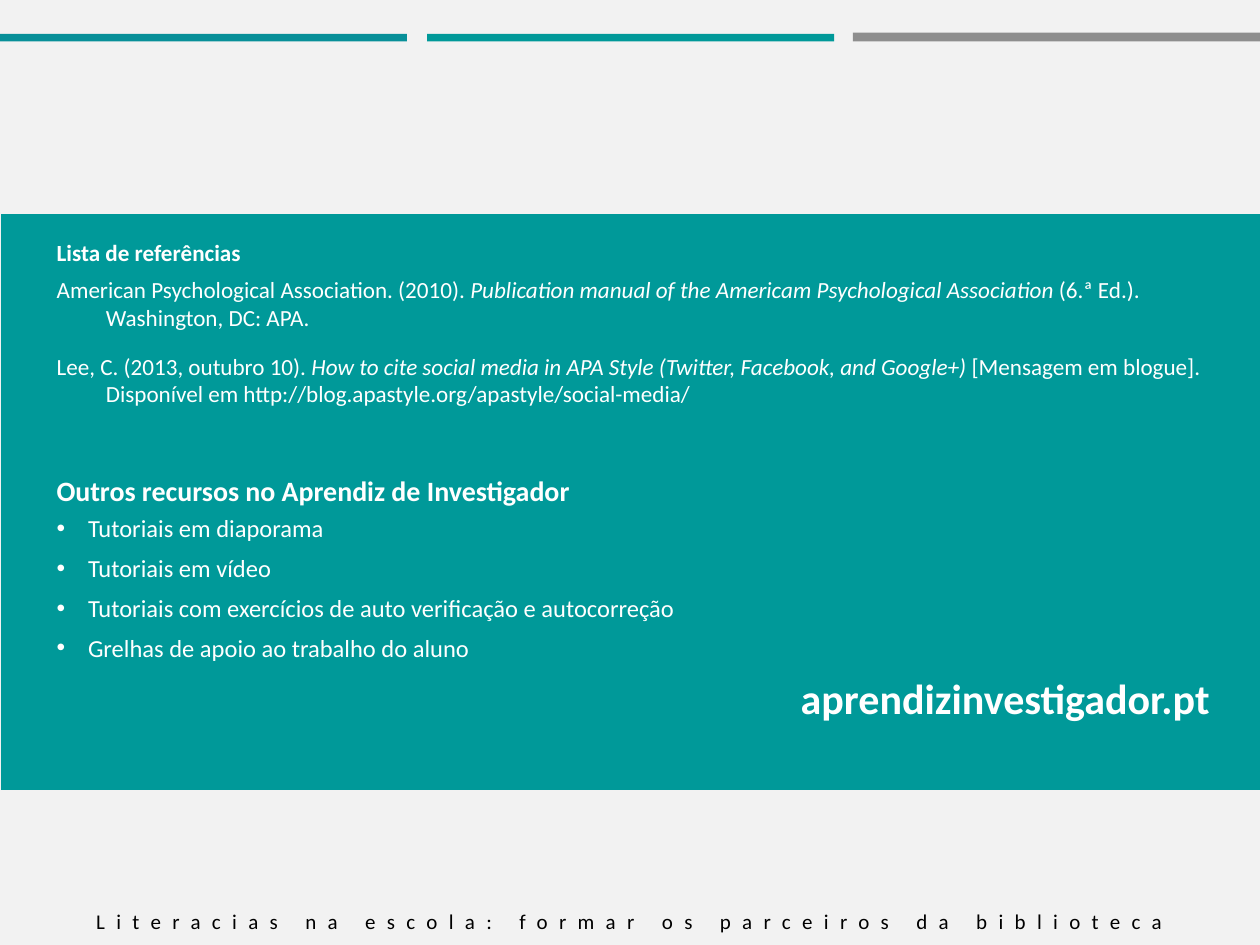
from lxml.etree import SubElement
from pptx import Presentation
from pptx.dml.color import RGBColor
from pptx.enum.shapes import MSO_SHAPE as SHAPE
from pptx.enum.text import MSO_ANCHOR as ANCHOR, MSO_AUTO_SIZE as AUTO, PP_ALIGN as ALIGN
from pptx.oxml.ns import qn
from pptx.util import Inches, Pt

BACKGROUND = RGBColor(0xF2, 0xF2, 0xF2)
TEAL = RGBColor(0x00, 0x99, 0x99)
DARK_TEAL = RGBColor(0x08, 0x90, 0x99)
GRAY = RGBColor(0x8E, 0x8E, 0x8E)
WHITE = RGBColor(0xFF, 0xFF, 0xFF)
BLACK = RGBColor(0x00, 0x00, 0x00)
FONT = "Calibri"

REFERENCES = [
    ("American Psychological Association. (2010). ",
     "Publication manual of the Americam Psychological Association",
     " (6.ª Ed.). Washington, DC: APA."),
    ("Lee, C. (2013, outubro 10). ",
     "How to cite social media in APA Style (Twitter, Facebook, and Google+) ",
     "[Mensagem em blogue]. Disponível em http://blog.apastyle.org/apastyle/social-media/"),
]
RESOURCES = [
    "Tutoriais em diaporama",
    "Tutoriais em vídeo",
    "Tutoriais com exercícios de auto verificação e autocorreção",
    "Grelhas de apoio ao trabalho do aluno",
]


def add_bar(s, left, top, width, height, color):
    """Add a plain filled rectangle."""
    sp = s.shapes.add_shape(SHAPE.RECTANGLE, Inches(left), Inches(top),
                            Inches(width), Inches(height))
    sp.shadow.inherit = False
    sp.fill.solid()
    sp.fill.fore_color.rgb = color
    sp.line.fill.background()


def place_text(sp, left, top, width, height):
    """Position a text shape and return its wrapped, top-anchored frame."""
    sp.left, sp.top = Inches(left), Inches(top)
    sp.width, sp.height = Inches(width), Inches(height)
    tf = sp.text_frame
    tf.word_wrap = True
    tf.auto_size = AUTO.NONE
    tf.vertical_anchor = ANCHOR.TOP
    return tf


def add_text(tf, *parts, size, color=WHITE, bold=False, align=ALIGN.LEFT,
             line=1.0, space=0, hang=0, bullet=None, tracking=None):
    """Add a paragraph whose every second part is italic."""
    p = tf.paragraphs[0] if not tf.text else tf.add_paragraph()
    p.alignment, p.line_spacing = align, line
    p.space_before = p.space_after = Pt(space)
    pPr = p._p.get_or_add_pPr()
    pPr.set("marL", str(Inches(hang)))
    pPr.set("indent", str(-Inches(hang)))
    if bullet:
        SubElement(pPr, qn("a:buFont"), typeface="Arial")
        SubElement(pPr, qn("a:buChar"), char=bullet)
    else:
        SubElement(pPr, qn("a:buNone"))
    for i, part in enumerate(parts):
        r = p.add_run()
        r.text = part
        r.font.name, r.font.size = FONT, Pt(size)
        r.font.bold, r.font.italic = bold, i % 2 == 1
        r.font.color.rgb = color
        if tracking:
            r._r.get_or_add_rPr().set("spc", str(int(tracking * 100)))


def add_references(s):
    """Fill the body placeholder with the reference list."""
    tf = place_text(s.placeholders[1], 0.35, 1.9, 9.35, 1.84)
    add_text(tf, "Lista de referências", size=13.2, bold=True, line=0.7)
    for parts in REFERENCES:
        add_text(tf, *parts, size=13.2, space=6, hang=0.39)


def add_resources(s):
    """Add the bulleted resources and the site address."""
    tf = place_text(s.shapes.add_textbox(0, 0, 0, 0), 0.35, 3.74, 9.35, 2.28)
    add_text(tf, "Outros recursos no Aprendiz de Investigador",
             size=16, bold=True, line=0.9)
    for text in RESOURCES:
        add_text(tf, text, size=14, space=3, hang=0.25, bullet="•")
    add_text(tf, "aprendizinvestigador.pt", size=24, bold=True,
             align=ALIGN.RIGHT, space=3)


def add_footer(s):
    """Add the letter-spaced footer line."""
    tf = place_text(s.shapes.add_textbox(0, 0, 0, 0), 0, 7.16, 10, 0.3)
    add_text(tf, "Literacias na escola: formar os parceiros da biblioteca",
             size=12, color=BLACK, align=ALIGN.CENTER, tracking=6.5)


def main():
    """Build and save the slide."""
    prs = Presentation()
    prs.slide_width, prs.slide_height = Inches(10), Inches(7.5)
    s = prs.slides.add_slide(prs.slide_layouts[1])
    s.background.fill.solid()
    s.background.fill.fore_color.rgb = BACKGROUND
    title = s.shapes.title._element
    title.getparent().remove(title)

    add_bar(s, 0.01, 1.7, 9.99, 4.57, TEAL)
    body = s.placeholders[1]._element
    body.getparent().append(body)
    add_references(s)
    add_bar(s, 0, 0.27, 3.23, 0.06, DARK_TEAL)
    add_bar(s, 3.39, 0.27, 3.23, 0.06, TEAL)
    add_bar(s, 6.77, 0.26, 3.23, 0.07, GRAY)
    add_resources(s)
    add_footer(s)
    prs.save("out.pptx")


if __name__ == "__main__":
    main()
